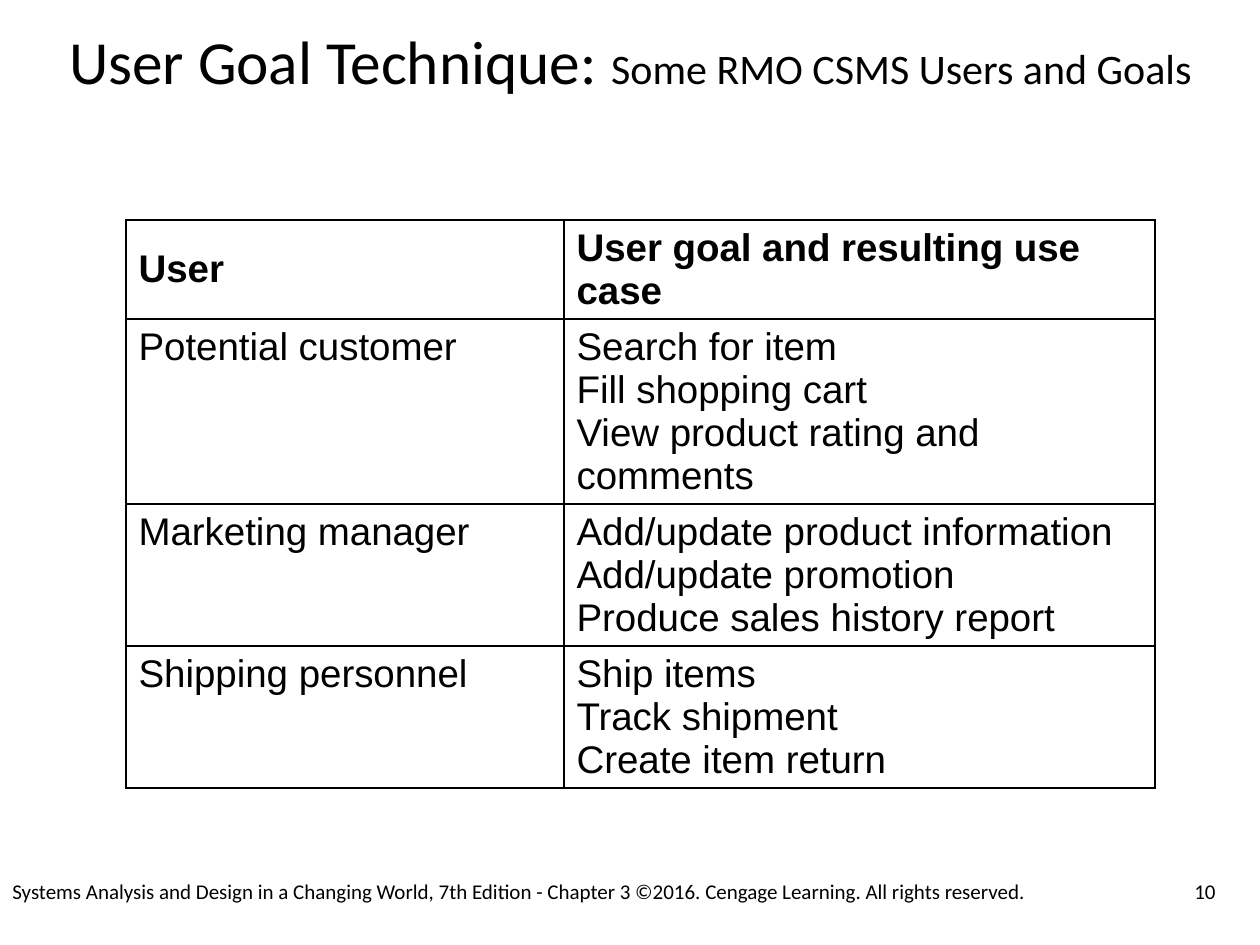
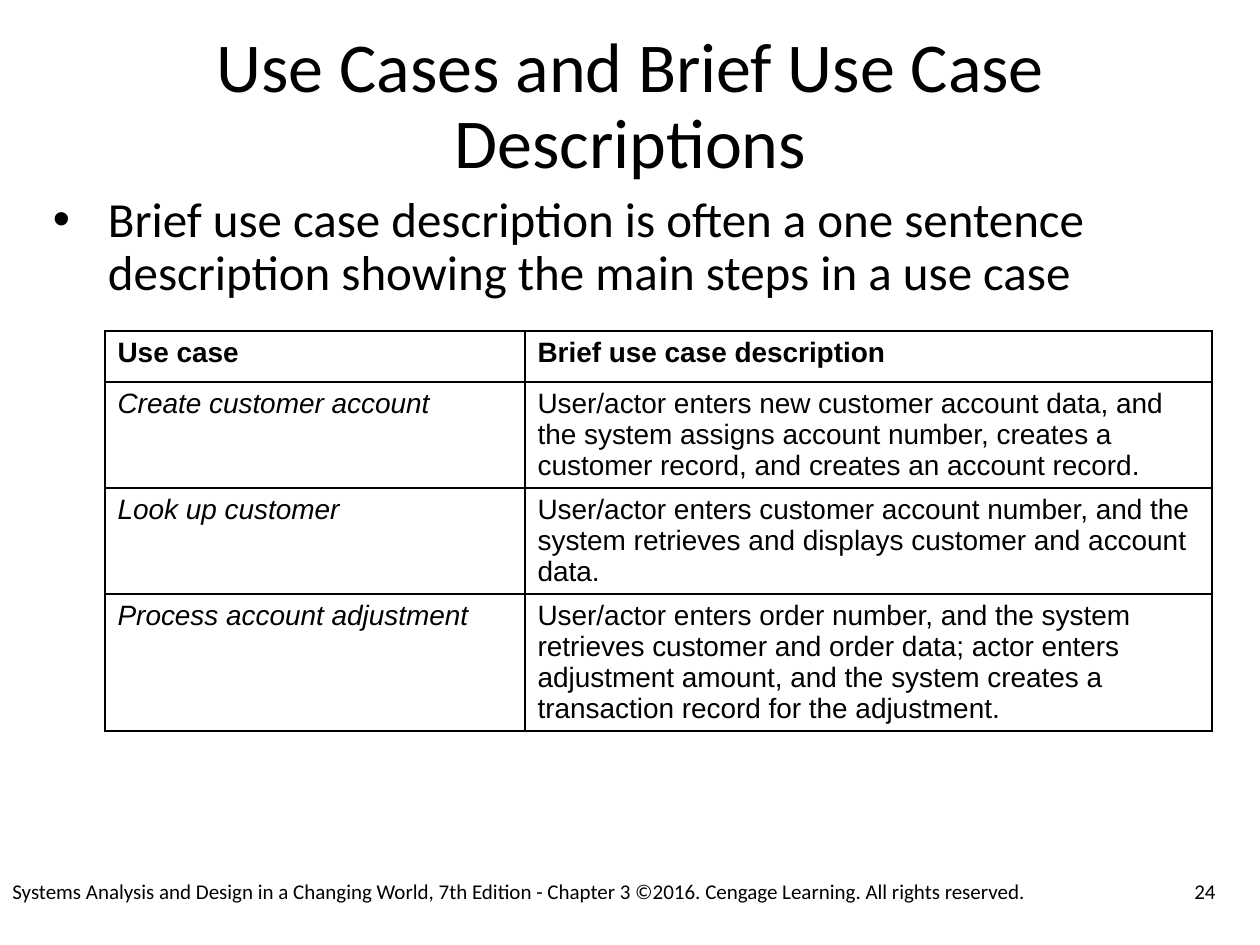
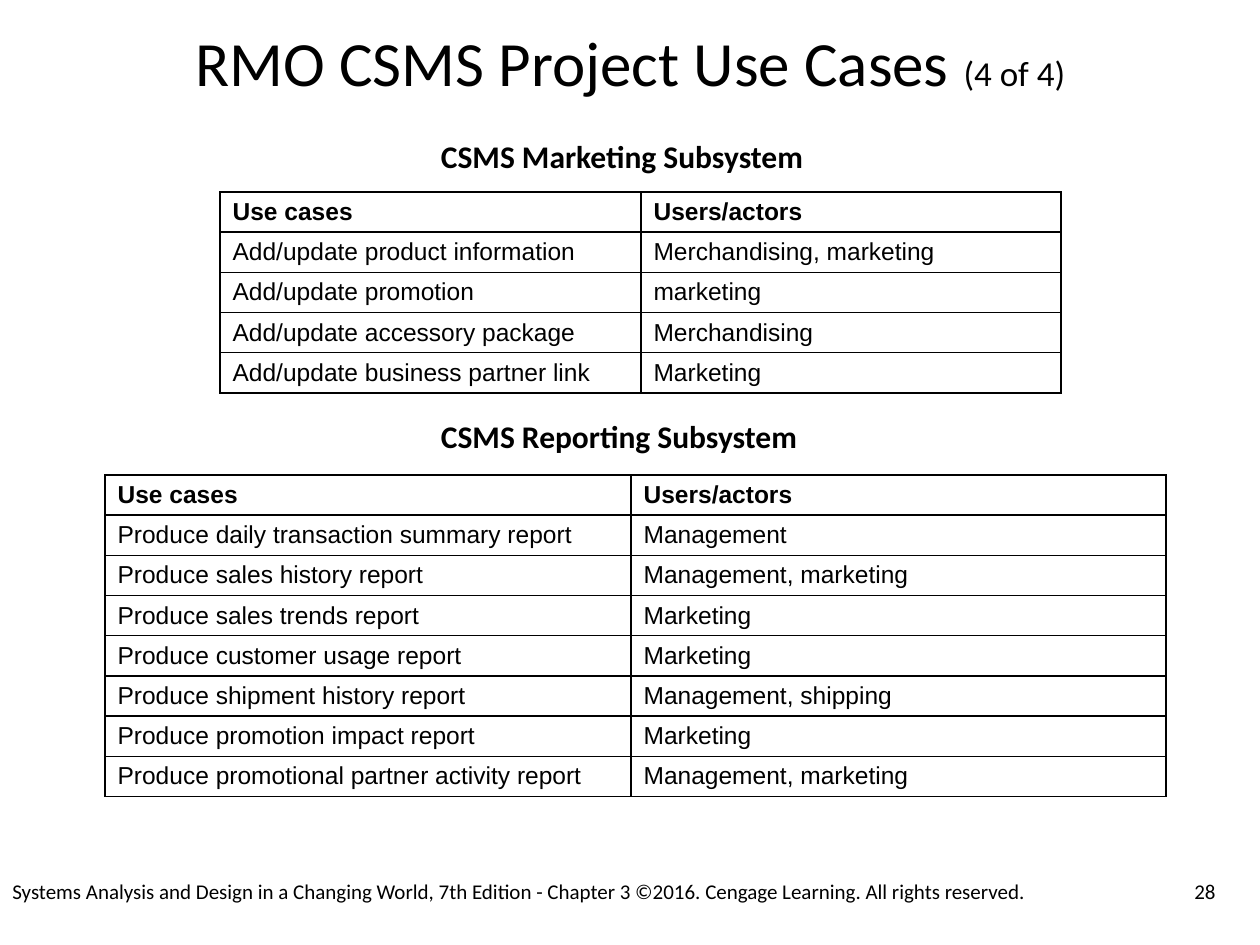
from lxml import etree
from pptx import Presentation
from pptx import util as u
from pptx.dml.color import RGBColor
from pptx.enum import text as t
from pptx.oxml import ns

EMU_PER_PX = u.Inches(1) / 126
TITLE_ONLY = 5
FOOTER = ("Systems Analysis and Design in a Changing World, 7th Edition - Chapter 3 "
          "©2016. Cengage Learning. All rights reserved.")


def px(length):
    """Turn px into EMU."""
    return u.Emu(round(length * EMU_PER_PX))


def color(value):
    """Turn a hex string into a colour."""
    return RGBColor.from_string(value)


def child(parent, tag, **attributes):
    """Append a DrawingML element."""
    return etree.SubElement(parent, ns.qn(f"a:{tag}"), attributes)


def write(frame, content, size, font="Calibri", ink="000000", bold=False, italic=False,
          align=t.PP_ALIGN.LEFT, spacing=None, bullet=None, indent=0, tail=None):
    """Write one paragraph per line, with an optional tail of another size."""
    for number, line in enumerate(content.split("\n")):
        paragraph = frame.add_paragraph() if number else frame.paragraphs[0]
        if bullet:
            properties = paragraph._p.get_or_add_pPr()
            properties.set("marL", str(px(indent)))
            properties.set("indent", str(-px(indent)))
            child(properties, "buFont", typeface="Arial")
            child(properties, "buChar", char=bullet)
        paragraph.alignment = align
        if spacing:
            paragraph.line_spacing = spacing
        for words, points in [(line, size)] + ([tail] if tail else []):
            run = paragraph.add_run()
            run.text = words
            run.font.name = font
            run.font.size = u.Pt(points)
            run.font.bold = bold
            run.font.italic = italic
            run.font.color.rgb = color(ink)


class Deck:
    """Hold the deck style and the current slide."""

    ink = "000000"
    paper = "FFFFFF"
    line_spacing = 0.9
    table_font = "Arial"

    def __init__(self):
        """Start a deck of 10 by 7.5 inches."""
        self.presentation = Presentation()
        self.presentation.slide_width = px(1260)
        self.presentation.slide_height = px(945)
        self.slide = None

    def add_slide(self, number, title, size, height, tail=None):
        """Add a slide with its title, footer and number."""
        layout = self.presentation.slide_layouts[TITLE_ONLY]
        self.slide = self.presentation.slides.add_slide(layout)
        self.slide.background.fill.solid()
        self.slide.background.fill.fore_color.rgb = color(self.paper)
        self.label(FOOTER, 0, 872, 1061, 38, size=12)
        self.label(str(number), 1182, 872, 52, 38, size=12, wrap=False)
        heading = self.slide.shapes.title
        heading.left, heading.top = px(53), px(32)
        heading.width, heading.height = px(1155), px(height)
        self.set_frame(heading.text_frame, inset=0)
        write(heading.text_frame, title, size, ink=self.ink, tail=tail,
              align=t.PP_ALIGN.CENTER, spacing=self.line_spacing)

    def set_frame(self, frame, wrap=True, inset=None):
        """Set the wrap, anchor and insets of a text frame."""
        frame.word_wrap = wrap
        frame.auto_size = t.MSO_AUTO_SIZE.NONE
        frame.vertical_anchor = t.MSO_ANCHOR.TOP
        if inset is not None:
            frame.margin_left = frame.margin_right = px(inset)
            frame.margin_top = frame.margin_bottom = px(inset)

    def label(self, content, left, top, width, height, wrap=True, inset=None, **style):
        """Add a text box."""
        box = self.slide.shapes.add_textbox(px(left), px(top), px(width), px(height))
        self.set_frame(box.text_frame, wrap, inset)
        write(box.text_frame, content, ink=self.ink, **style)

    def body(self, content, left, top, width, height, **style):
        """Add body text without insets."""
        self.label(content, left, top, width, height, inset=0,
                   spacing=self.line_spacing, **style)

    def table(self, rows, left, top, widths, heights, size, italic_names=False,
              header_anchor=t.MSO_ANCHOR.TOP):
        """Add a ruled table with a bold header row."""
        table = self.slide.shapes.add_table(
            len(rows), len(widths), px(left), px(top),
            px(sum(widths)), px(sum(heights))).table
        table.first_row = table.horz_banding = False
        for column, width in zip(table.columns, widths):
            column.width = px(width)
        for r, (row, height) in enumerate(zip(rows, heights)):
            table.rows[r].height = px(height)
            for c, content in enumerate(row):
                cell = table.cell(r, c)
                self.rule(cell)
                cell.fill.background()
                cell.vertical_anchor = t.MSO_ANCHOR.TOP if r else header_anchor
                write(cell.text_frame, content, size, font=self.table_font, ink=self.ink,
                      bold=r == 0, italic=italic_names and r > 0 and c == 0)

    def rule(self, cell):
        """Draw the four borders of a cell."""
        properties = cell._tc.get_or_add_tcPr()
        for side in ("lnL", "lnR", "lnT", "lnB"):
            border = child(properties, side, w=str(u.Pt(1)))
            child(child(border, "solidFill"), "srgbClr", val=self.ink)


def main():
    """Build and save the three slides."""
    deck = Deck()

    deck.add_slide(10, "User Goal Technique: ", 35, 67,
                   tail=("Some RMO CSMS Users and Goals", 24))
    goals = [
        ("User", "User goal and resulting use case"),
        ("Potential customer",
         "Search for item\nFill shopping cart\nView product rating and comments"),
        ("Marketing manager",
         "Add/update product information\nAdd/update promotion\nProduce sales history report"),
        ("Shipping personnel", "Ship items\nTrack shipment\nCreate item return"),
    ]
    deck.table(goals, 126, 220, (438, 591), (99, 185, 142, 142), 22,
               header_anchor=t.MSO_ANCHOR.MIDDLE)

    deck.add_slide(24, "Use Cases and Brief Use Case Descriptions", 40, 152)
    deck.body("Brief use case description is often a one sentence description "
              "showing the main steps in a use case",
              53, 195, 1155, 110, size=28, bullet="•", indent=55)
    descriptions = [
        ("Use case", "Brief use case description"),
        ("Create customer account",
         "User/actor enters new customer account data, and the system assigns account "
         "number, creates a customer record, and creates an account record."),
        ("Look up customer",
         "User/actor enters customer account number, and the system retrieves and "
         "displays customer and account data."),
        ("Process account adjustment",
         "User/actor enters order number, and the system retrieves customer and order "
         "data; actor enters adjustment amount, and the system creates a transaction "
         "record for the adjustment."),
    ]
    deck.table(descriptions, 105, 331, (420, 687), (51, 106, 106, 137), 16,
               italic_names=True)

    deck.add_slide(28, "RMO CSMS Project Use Cases ", 36, 69, tail=("(4 of 4)", 20))
    marketing = [
        ("Use cases", "Users/actors"),
        ("Add/update product information", "Merchandising, marketing"),
        ("Add/update promotion", "marketing"),
        ("Add/update accessory package", "Merchandising"),
        ("Add/update business partner link", "Marketing"),
    ]
    reporting = [
        ("Use cases", "Users/actors"),
        ("Produce daily transaction summary report", "Management"),
        ("Produce sales history report", "Management, marketing"),
        ("Produce sales trends report", "Marketing"),
        ("Produce customer usage report", "Marketing"),
        ("Produce shipment history report", "Management, shipping"),
        ("Produce promotion impact report", "Marketing"),
        ("Produce promotional partner activity report", "Management, marketing"),
    ]
    subsystems = [
        ("CSMS Marketing Subsystem", 141, 441, marketing, 220, 192, (421, 420)),
        ("CSMS Reporting Subsystem", 421, 368, reporting, 105, 475, (526, 535)),
    ]
    for name, name_top, name_width, rows, left, top, widths in subsystems:
        deck.body(name, 441, name_top, name_width, 34, size=18, bold=True)
        deck.table(rows, left, top, widths, [40] * len(rows), 14)

    deck.presentation.save("out.pptx")


if __name__ == "__main__":
    main()
